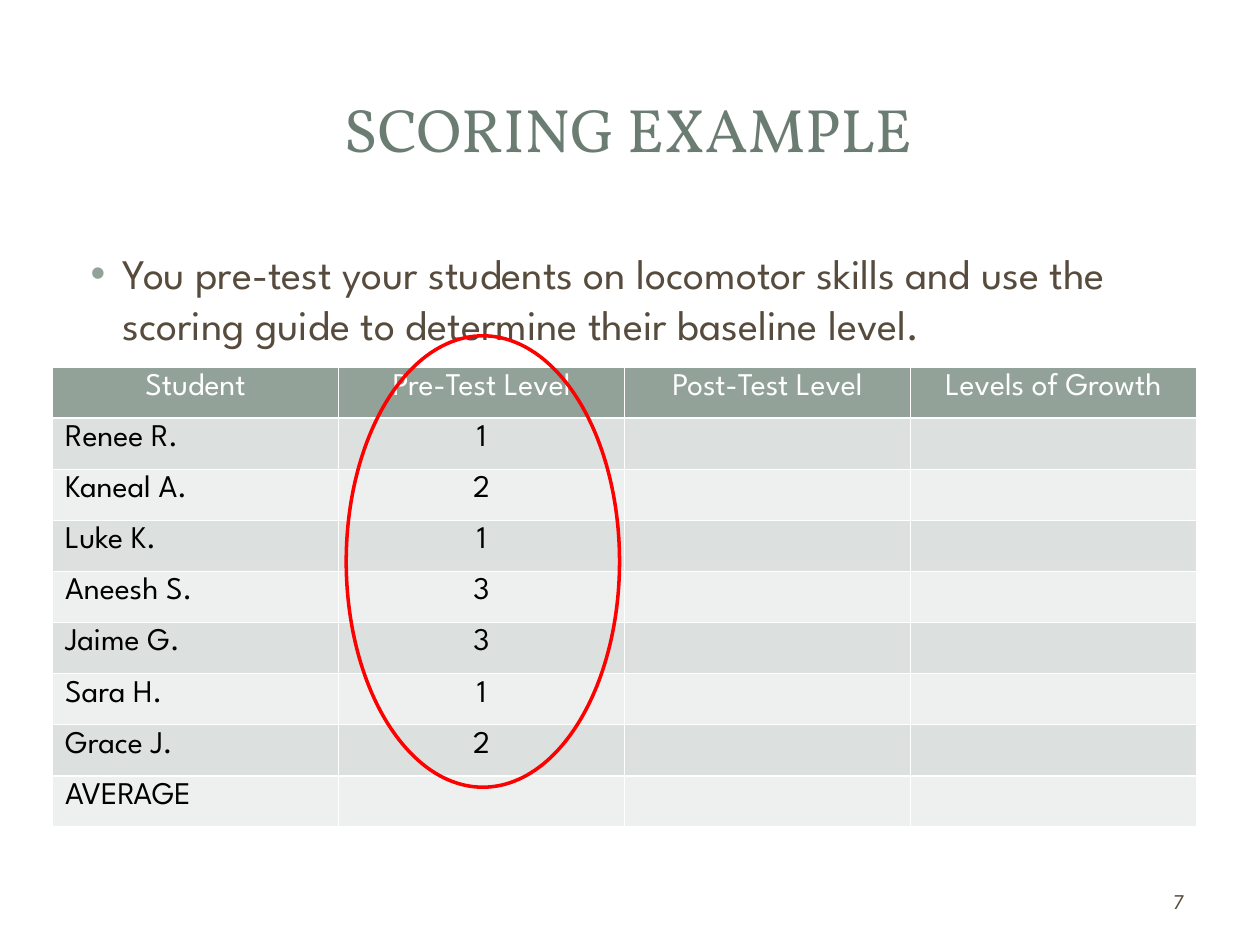
from lxml.etree import SubElement
from pptx import Presentation
from pptx.dml.color import RGBColor
from pptx.enum.shapes import MSO_SHAPE
from pptx.enum.text import MSO_ANCHOR, PP_ALIGN
from pptx.oxml.ns import qn
from pptx.util import Cm, Pt

TITLE = "SCORING EXAMPLE"
BODY = ("You pre-test your students on locomotor skills and use the "
        "scoring guide to determine their baseline level.")
PAGE = "7"
HEADER = ["Student", "Pre-Test Level", "Post-Test Level", "Levels of Growth"]
SCORES = [("Renee R.", "1"), ("Kaneal A.", "2"), ("Luke K.", "1"),
          ("Aneesh S.", "3"), ("Jaime G.", "3"), ("Sara H.", "1"),
          ("Grace J.", "2"), ("AVERAGE", "")]
PANELS = [(MSO_SHAPE.ROUNDED_RECTANGLE, 0.25, 0.28, 24.89, 18.52, 100),
          (MSO_SHAPE.RECTANGLE, 0.76, 0.76, 23.88, 3.68, 83),
          (MSO_SHAPE.RECTANGLE, 1.04, 1.04, 23.29, 3.1, 100)]
COLORS = {"title": "6B7D72", "body": "564B3C", "accent": "93A299",
          "white": "FFFFFF", "black": "000000", "ring": "FF0000",
          "odd": "DCE0DE", "even": "EEF0EF"}
HEADING_FONT, BODY_FONT = "Vollkorn", "League Spartan"


def color(name):
    return RGBColor.from_string(COLORS[name])


def write(text_frame, text, size, color_name, align=PP_ALIGN.LEFT, font=BODY_FONT):
    text_frame.text = text
    text_frame.word_wrap = True
    paragraph = text_frame.paragraphs[0]
    paragraph.alignment = align
    for run in paragraph.runs:
        run.font.name = font
        run.font.size = Pt(size)
        run.font.bold = False
        run.font.color.rgb = color(color_name)
    return paragraph


def add_bullet(paragraph):
    properties = paragraph._p.get_or_add_pPr()
    properties.set("marL", str(Cm(0.95)))
    properties.set("indent", str(-Cm(0.64)))
    bullet_color = SubElement(properties, qn("a:buClr"))
    SubElement(bullet_color, qn("a:srgbClr"), val=COLORS["accent"])
    SubElement(properties, qn("a:buFont"), typeface="Arial")
    SubElement(properties, qn("a:buChar"), char="•")


def add_panels(slide):
    for kind, left, top, width, height, opacity in PANELS:
        panel = slide.shapes.add_shape(kind, Cm(left), Cm(top), Cm(width), Cm(height))
        panel.shadow.inherit = False
        panel.fill.solid()
        panel.fill.fore_color.rgb = color("white")
        panel.line.fill.background()
        if kind == MSO_SHAPE.ROUNDED_RECTANGLE:
            panel.adjustments[0] = 0.02
        if opacity < 100:
            fill_color = panel._element.spPr.find(qn("a:solidFill"))[0]
            SubElement(fill_color, qn("a:alpha"), val=str(opacity * 1000))


def add_title(slide):
    title = slide.shapes.title
    slide.shapes._spTree.append(title._element)
    title.left, title.top, title.width, title.height = Cm(1.19), Cm(1.14), Cm(22.94), Cm(2.9)
    title.text_frame.vertical_anchor = MSO_ANCHOR.MIDDLE
    write(title.text_frame, TITLE, 35, "title", PP_ALIGN.CENTER, HEADING_FONT)


def add_texts(slide):
    body = slide.shapes.add_textbox(Cm(1.27), Cm(4.87), Cm(22.86), Cm(12.14))
    add_bullet(write(body.text_frame, BODY, 24, "body"))
    number = slide.shapes.add_textbox(Cm(18.21), Cm(17.65), Cm(5.92), Cm(1.02))
    number.text_frame.vertical_anchor = MSO_ANCHOR.MIDDLE
    write(number.text_frame, PAGE, 12, "body", PP_ALIGN.RIGHT)


def add_scores(slide):
    rows = [HEADER] + [(*score, "", "") for score in SCORES]
    table = slide.shapes.add_table(len(rows), len(HEADER), Cm(1.06), Cm(7.4),
                                   Cm(23.06), Cm(9.27)).table
    for row_index, row in enumerate(rows):
        is_header = row_index == 0
        fill = "accent" if is_header else "odd" if row_index % 2 else "even"
        for column_index, text in enumerate(row):
            cell = table.cell(row_index, column_index)
            cell.fill.solid()
            cell.fill.fore_color.rgb = color(fill)
            align = PP_ALIGN.CENTER if is_header or column_index else PP_ALIGN.LEFT
            write(cell.text_frame, text, 18, "white" if is_header else "black", align)


def add_ring(slide):
    ring = slide.shapes.add_shape(MSO_SHAPE.OVAL, Cm(6.98), Cm(6.77), Cm(5.51), Cm(9.1))
    ring.shadow.inherit = False
    ring.fill.background()
    ring.line.color.rgb = color("ring")
    ring.line.width = Pt(2)


def main():
    """Build the scoring example slide."""
    presentation = Presentation()
    presentation.slide_width, presentation.slide_height = Cm(25.4), Cm(19.05)
    slide = presentation.slides.add_slide(presentation.slide_layouts[5])
    add_panels(slide)
    add_title(slide)
    add_texts(slide)
    add_scores(slide)
    add_ring(slide)
    presentation.save("out.pptx")


if __name__ == "__main__":
    main()
